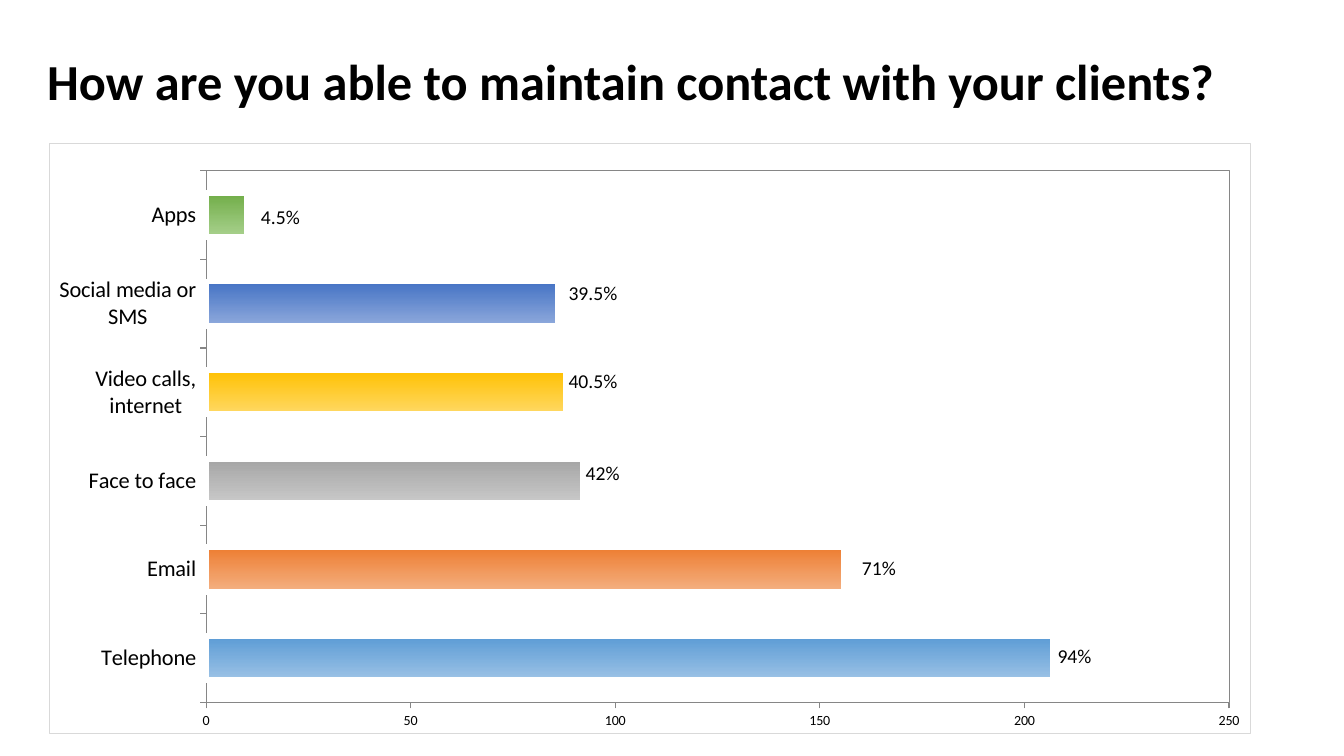
from lxml.etree import fromstring
from pptx import Presentation
from pptx.chart.data import CategoryChartData
from pptx.dml.color import RGBColor
from pptx.enum.chart import XL_CHART_TYPE, XL_TICK_MARK
from pptx.oxml.ns import nsdecls, qn
from pptx.util import Inches, Pt

FONT = "Calibri"
COLORS = {"text": "000000", "bar_edge": "FFFFFF", "axis": "868686", "frame": "D9D9D9"}

# contact method, clients, gradient start and end
METHODS = [
    ("Telephone", 207, "5B9BD5", "9DC3E6"),
    ("Email", 156, "ED7D31", "F4B183"),
    ("Face to face", 92, "A5A5A5", "C9C9C9"),
    ("Video calls, internet", 88, "FFC000", "FFD966"),
    ("Social media or SMS", 86, "4472C4", "8FAADC"),
    ("Apps", 10, "70AD47", "A9D18E"),
]

# share, left, top
SHARES = [
    ("94%", 10.39, 6.34),
    ("71%", 8.45, 5.47),
    ("42%", 5.71, 4.52),
    ("40.5%", 5.54, 3.61),
    ("39.5%", 5.54, 2.74),
    ("4.5%", 2.49, 1.98),
]


def style_font(font, size, bold=False):
    font.name = FONT
    font.size = Pt(size)
    font.bold = bold
    font.color.rgb = RGBColor.from_string(COLORS["text"])


def add_text(slide, text, left, top, width, height, size, bold=False):
    box = slide.shapes.add_textbox(Inches(left), Inches(top), Inches(width), Inches(height))
    frame = box.text_frame
    frame.word_wrap = True
    paragraph = frame.paragraphs[0]
    paragraph.text = text
    style_font(paragraph.font, size, bold)
    return frame


def add_title(slide, left, top, width, height):
    title = add_text(slide, "How are you able to maintain contact with your clients?",
                     left, top, width, height, 36, bold=True)
    title.margin_top = Inches(0.17)
    title.paragraphs[0].line_spacing = 0.9


def outline(color, width):
    """Return chart shape properties with no fill and a plain line."""
    return fromstring(
        f'<c:spPr {nsdecls("c", "a")}><a:noFill/><a:ln w="{Pt(width)}"><a:solidFill>'
        f'<a:srgbClr val="{color}"/></a:solidFill></a:ln></c:spPr>')


def set_plot_layout(plot_area, x, y, w, h):
    """Fix the inner plot area, in fractions of the chart."""
    for layout in plot_area.findall(qn("c:layout")):
        plot_area.remove(layout)
    sizes = "".join(f'<c:{key} val="{value}"/>'
                    for key, value in (("x", x), ("y", y), ("w", w), ("h", h)))
    plot_area.insert(0, fromstring(
        f'<c:layout {nsdecls("c")}><c:manualLayout><c:layoutTarget val="inner"/>'
        f'<c:xMode val="edge"/><c:yMode val="edge"/>{sizes}</c:manualLayout></c:layout>'))


def style_axis(axis, size):
    axis.has_major_gridlines = False
    axis.major_tick_mark = XL_TICK_MARK.OUTSIDE
    axis.minor_tick_mark = XL_TICK_MARK.NONE
    axis.format.line.color.rgb = RGBColor.from_string(COLORS["axis"])
    axis.format.line.width = Pt(0.75)
    style_font(axis.tick_labels.font, size)


def style_bar(bar, start, end):
    bar.fill.gradient()
    bar.fill.gradient_angle = 270
    for stop, position, color in zip(bar.fill.gradient_stops, (0, 1), (start, end)):
        stop.position = position
        stop.color.rgb = RGBColor.from_string(color)
    bar.line.color.rgb = RGBColor.from_string(COLORS["bar_edge"])
    bar.line.width = Pt(4.25)


def add_contact_chart(slide, left, top, width, height):
    data = CategoryChartData()
    data.categories = [method[0] for method in METHODS]
    data.add_series("Series 1", [method[1] for method in METHODS])
    chart = slide.shapes.add_chart(
        XL_CHART_TYPE.BAR_CLUSTERED, Inches(left), Inches(top),
        Inches(width), Inches(height), data).chart
    chart.has_legend = False
    chart.has_title = False
    style_font(chart.font, 10)
    style_axis(chart.category_axis, 16)
    style_axis(chart.value_axis, 10)
    chart.value_axis.minimum_scale = 0
    chart.value_axis.maximum_scale = 250
    chart.value_axis.major_unit = 50

    bars = chart.plots[0]
    bars.gap_width = 100
    bars.vary_by_categories = False
    for index, (_, _, start, end) in enumerate(METHODS):
        style_bar(bars.series[0].points[index].format, start, end)

    chart_xml = chart.element.find(qn("c:chart"))
    plot_area = chart_xml.find(qn("c:plotArea"))
    set_plot_layout(plot_area, 0.13, 0.046, 0.852, 0.902)
    plot_area.append(outline(COLORS["axis"], 0.75))
    chart_xml.addnext(outline(COLORS["frame"], 0.75))


def add_shares(slide):
    for share, left, top in SHARES:
        add_text(slide, share, left, top, 0.69, 0.33, 14)


def main():
    deck = Presentation()
    deck.slide_width = Inches(13.33)
    deck.slide_height = Inches(7.5)
    slide = deck.slides.add_slide(deck.slide_layouts[6])
    add_title(slide, 0.37, 0.4, 12.53, 1.45)
    add_contact_chart(slide, 0.49, 1.42, 11.92, 5.86)
    add_shares(slide)
    deck.save("out.pptx")


if __name__ == "__main__":
    main()
